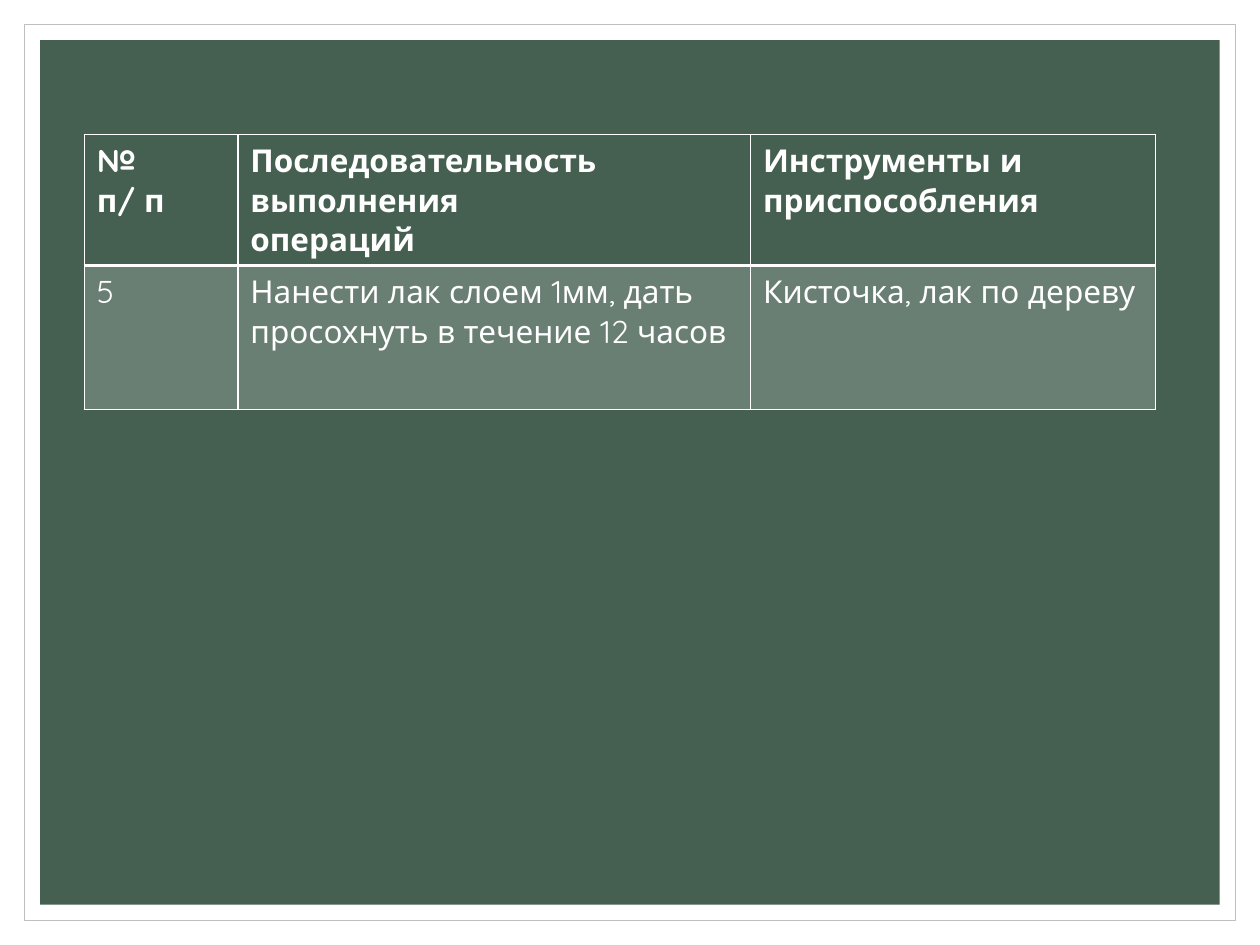
from lxml.etree import SubElement
from pptx import Presentation
from pptx.dml.color import RGBColor
from pptx.enum.shapes import MSO_SHAPE
from pptx.oxml.ns import qn
from pptx.util import Pt

COLORS = {"white": "FFFFFF", "green": "455F51", "frame": "BFBFBF"}
FONT = "Quicksand"
SLIDE = (720, 540)
COLUMNS = (87.7, 293, 231.5)
ROWS = (70.8, 82)
HEADER = ("№\nп/ п", "Последовательность выполнения\vопераций",
          "Инструменты и приспособления")
STEP = ("5", "Нанести лак слоем 1мм, дать просохнуть в течение 12 часов",
        "Кисточка, лак по дереву")


def rgb(name):
    return RGBColor.from_string(COLORS[name])


def add_panel(page, box, inset, fill, line=None):
    """Rectangle set in from every edge of the box."""
    left, top, width, height = box
    panel = page.shapes.add_shape(
        MSO_SHAPE.RECTANGLE, Pt(left + inset), Pt(top + inset),
        Pt(width - 2 * inset), Pt(height - 2 * inset))
    panel.shadow.inherit = False
    panel.fill.solid()
    panel.fill.fore_color.rgb = rgb(fill)
    if line:
        panel.line.color.rgb = rgb(line)
        panel.line.width = Pt(0.5)
    else:
        panel.line.fill.background()


def add_background(page, box):
    add_panel(page, box, 13.7, "white", "frame")
    add_panel(page, box, 23, "green")


def set_borders(cell, widths):
    """Borders come before the fill in the cell properties."""
    properties = cell._tc.get_or_add_tcPr()
    for index, (side, width) in enumerate(widths.items()):
        line = SubElement(properties, qn(f"a:ln{side}"), w=str(Pt(width)))
        fill = SubElement(line, qn("a:solidFill"))
        SubElement(fill, qn("a:srgbClr"), val=COLORS["white"])
        properties.insert(index, line)


def set_fill(cell, alpha):
    if alpha is None:
        cell.fill.background()
        return
    cell.fill.solid()
    cell.fill.fore_color.rgb = rgb("white")
    color = cell._tc.tcPr.find(f"{qn('a:solidFill')}/{qn('a:srgbClr')}")
    SubElement(color, qn("a:alpha"), val=str(alpha * 1000))


def set_text(cell, text, bold):
    cell.text = text
    text_format = {"name": FONT, "size": Pt(18), "bold": bold}
    for para in cell.text_frame.paragraphs:
        for span in para.runs:
            for key, value in text_format.items():
                setattr(span.font, key, value)
            span.font.color.rgb = rgb("white")


def add_steps_table(page, left, top):
    table = page.shapes.add_table(
        len(ROWS), len(COLUMNS), Pt(left), Pt(top),
        Pt(sum(COLUMNS)), Pt(sum(ROWS))).table
    for column, width in zip(table.columns, COLUMNS):
        column.width = Pt(width)
    for row, height in zip(table.rows, ROWS):
        row.height = Pt(height)

    # Text, fill and borders of the header and the step
    styles = (
        {"bold": True, "alpha": None, "top": 1, "bottom": 2},
        {"bold": False, "alpha": 20, "top": 2, "bottom": 1},
    )
    for row, texts, style in zip(table.rows, (HEADER, STEP), styles):
        for cell, text in zip(row.cells, texts):
            set_text(cell, text, style["bold"])
            set_fill(cell, style["alpha"])
            set_borders(cell, {"L": 1, "R": 1, "T": style["top"],
                               "B": style["bottom"]})


def main():
    deck = Presentation()
    deck.slide_width, deck.slide_height = map(Pt, SLIDE)
    page = deck.slides.add_slide(deck.slide_layouts[6])
    add_background(page, (0, 0, *SLIDE))
    add_steps_table(page, 48.2, 77)
    deck.save("out.pptx")


if __name__ == "__main__":
    main()
